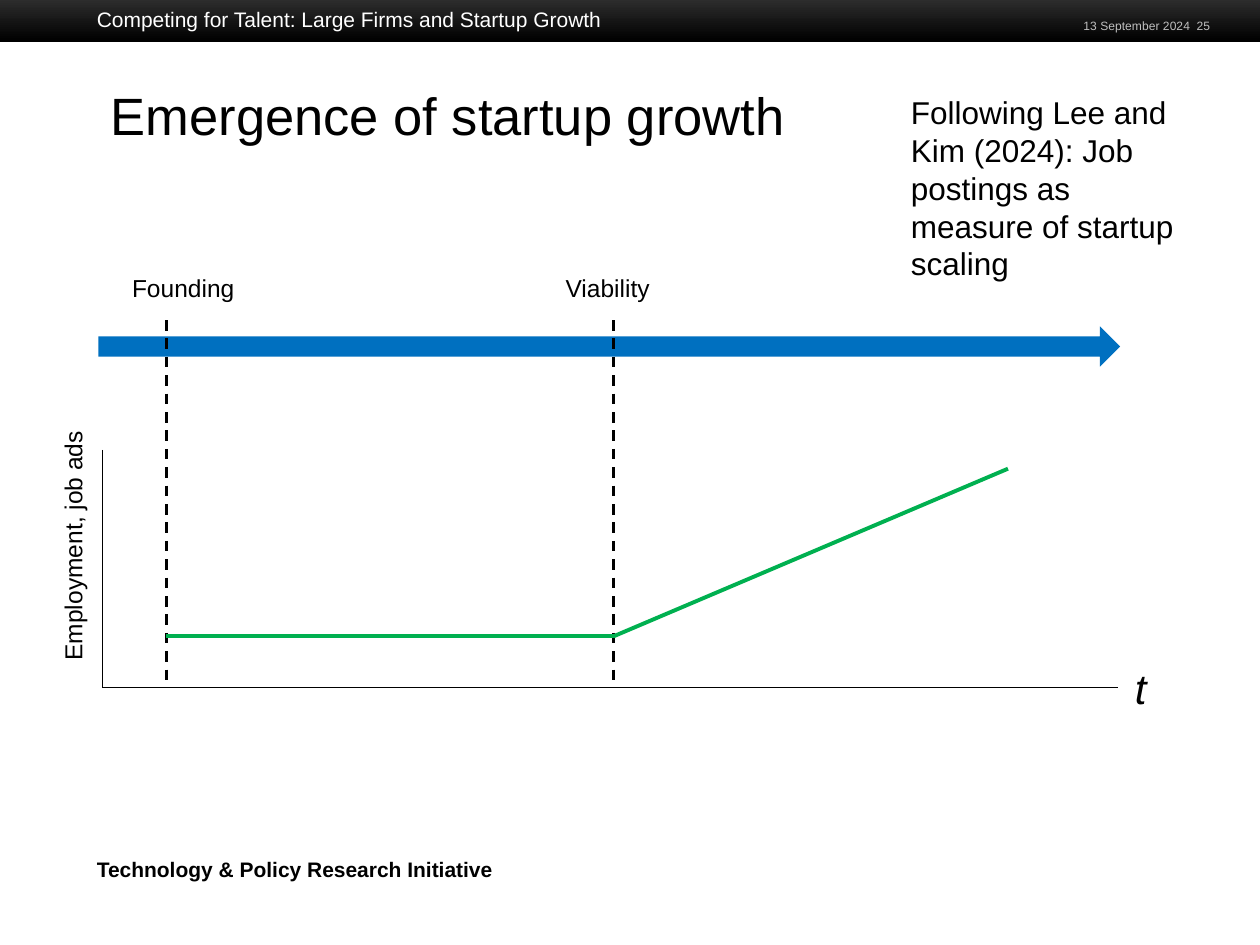
from dataclasses import dataclass

from lxml import etree
from pptx import Presentation
from pptx.dml.color import RGBColor
from pptx.enum.dml import MSO_LINE
from pptx.enum.shapes import MSO_CONNECTOR, MSO_SHAPE
from pptx.enum.text import MSO_ANCHOR, MSO_AUTO_SIZE, PP_ALIGN
from pptx.oxml.ns import qn
from pptx.util import Inches, Pt

RECT, ARROW = MSO_SHAPE.RECTANGLE, MSO_SHAPE.RIGHT_ARROW
STRAIGHT, DASH = MSO_CONNECTOR.STRAIGHT, MSO_LINE.DASH
TOP, BOTTOM, LEFT = MSO_ANCHOR.TOP, MSO_ANCHOR.BOTTOM, PP_ALIGN.LEFT
GROW = MSO_AUTO_SIZE.SHAPE_TO_FIT_TEXT


@dataclass(frozen=True)
class Theme:
    font: str = "Arial"
    ink: RGBColor = RGBColor(0, 0, 0)
    char: RGBColor = RGBColor(0x33, 0x33, 0x33)
    pale: RGBColor = RGBColor(0xBF, 0xBF, 0xBF)
    white: RGBColor = RGBColor(0xFF, 0xFF, 0xFF)
    blue: RGBColor = RGBColor(0x00, 0x70, 0xC0)
    green: RGBColor = RGBColor(0x00, 0xB0, 0x50)
    title: int = 30
    axis: int = 24
    body: int = 18
    label: int = 14
    small: int = 12


theme = Theme()
deck = Presentation()
deck.slide_width, deck.slide_height = Inches(10), Inches(7.5)
slide = deck.slides.add_slide(deck.slide_layouts[5])
shapes = slide.shapes

# Grid of 100 columns by 75 rows
col, row = deck.slide_width / 100, deck.slide_height / 75


def write(shape, box, text, size, color=theme.ink):
    """Place a text shape on the grid, fill it and return its paragraph."""
    left, top, width, height = box
    shape.left, shape.top = int(left * col), int(top * row)
    shape.width, shape.height = int(width * col), int(height * row)
    frame = shape.text_frame
    frame.word_wrap, frame.vertical_anchor = True, TOP
    para = frame.paragraphs[0]
    para.text, para.alignment = text, LEFT
    font = para.font
    font.name, font.size, font.color.rgb = theme.font, Pt(size), color
    return para


def draw(start, end, color, width, dash=None):
    """Draw a straight line between two grid points."""
    line = shapes.add_connector(
        STRAIGHT, int(start[0] * col), int(start[1] * row),
        int(end[0] * col), int(end[1] * row))
    line.line.color.rgb, line.line.width = color, Pt(width)
    if dash:
        line.line.dash_style = dash
    etree.SubElement(line._element.spPr, qn("a:effectLst"))


# Title
title = write(shapes.title, (7.8, 6.2, 82.9, 6.8),
              "Emergence of startup growth", theme.title)
title.line_spacing = Pt(35)

# Header band and time arrow
band = shapes.add_shape(RECT, 0, int(-0.5 * row), deck.slide_width, int(3.8 * row))
band.fill.gradient()
band.fill.gradient_angle = 270
for stop, color in zip(band.fill.gradient_stops, (theme.char, theme.ink)):
    stop.color.rgb = color
arrow = shapes.add_shape(ARROW, int(7.8 * col), int(25.9 * row),
                         int(81.1 * col), int(3.2 * row))
arrow.fill.solid()
arrow.fill.fore_color.rgb = theme.blue
for shape in (band, arrow):
    shape.shadow.inherit = False
    shape.line.fill.background()

# Axes, stage markers and growth path
axis, base, flat = 8.1, 54.6, 50.5
found, viable = 13.2, 48.7
draw((axis, 35.7), (axis, base), theme.ink, 0.5)
draw((axis, base), (88.7, base), theme.ink, 0.5)
for stage in (viable, found):
    draw((stage, 25.4), (stage, base), theme.ink, 1.5, DASH)
path = [(found, flat), (viable, flat), (80, 37.2)]
for start, end in zip(path, path[1:]):
    draw(start, end, theme.green, 2.25)

# Labels that grow with their text
labels = {
    "Founding": ((9.5, 21.2, 13.7, 3.4), theme.label),
    "Viability": ((43.9, 21.2, 11.6, 3.4), theme.label),
    "Employment, job ads": ((-13.9, 32, 39.4, 3.4), theme.label),
    "t": ((89.1, 52.1, 5.6, 5), theme.axis),
    "Following Lee and Kim (2024): Job postings as measure of startup scaling":
        ((72.3, 7.3, 20.9, 15.1), theme.body),
    "Technology & Policy Research Initiative": ((6.7, 67.5, 51, 3), theme.small),
}
for text, (box, size) in labels.items():
    label = shapes.add_textbox(0, 0, 0, 0)
    para = write(label, box, text, size)
    frame = label.text_frame
    frame.auto_size = GROW
    if text.startswith("Employment"):
        label.rotation = 270
    elif text == "t":
        para.font.italic = True
    elif text.startswith("Following"):
        frame.vertical_anchor = BOTTOM
        frame.margin_left = frame.margin_right = 0
        frame.margin_top = frame.margin_bottom = 0
    elif text.startswith("Technology"):
        para.font.bold = True

# Header text, with the date raised as superscript
write(shapes.add_textbox(0, 0, 0, 0), (6.7, 0, 55.8, 3.3),
      "Competing for Talent: Large Firms and Startup Growth",
      theme.small, theme.white)
date = write(shapes.add_textbox(0, 0, 0, 0), (85, 0.8, 14.2, 2.5),
             "13 September 2024  25", theme.small, theme.pale)
date.runs[0].font._element.set("baseline", "30000")

deck.save("out.pptx")
